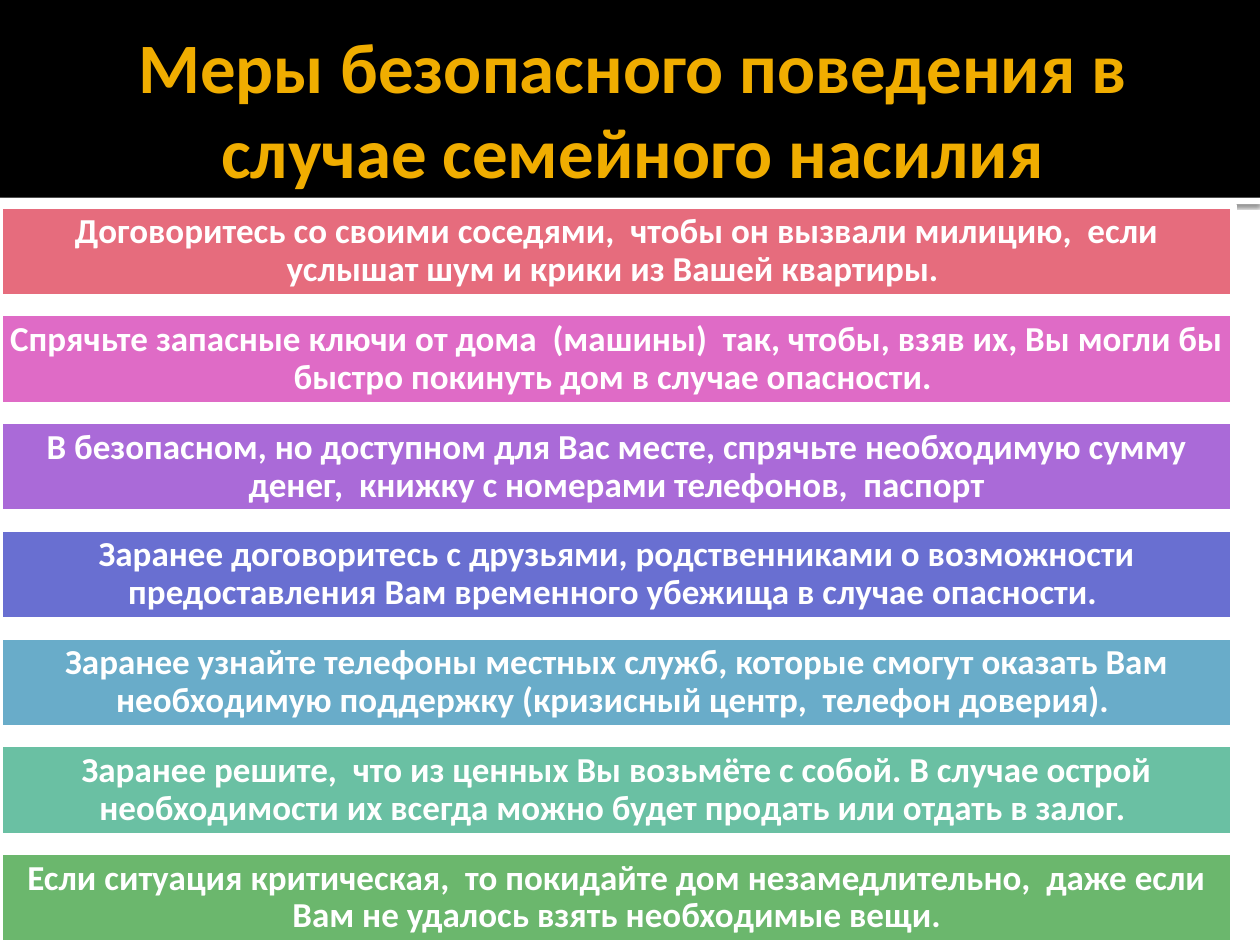
from lxml import etree
from pptx import Presentation
from pptx.dml.color import RGBColor
from pptx.enum.shapes import MSO_SHAPE
from pptx.enum.text import MSO_ANCHOR, PP_ALIGN
from pptx.oxml.ns import qn
from pptx.util import Inches, Pt

RECT = MSO_SHAPE.RECTANGLE
MIDDLE = MSO_ANCHOR.MIDDLE
CENTER = PP_ALIGN.CENTER

COLORS = {
    "black": "000000", "white": "FFFFFF", "gold": "F0AD00",
    "rose": "E66C7D", "pink": "DF6BC6", "purple": "AA6AD8", "indigo": "696FD1",
    "blue": "69ACC9", "teal": "6AC0A3", "green": "6BB76D",
}

RULES = [
    ("rose", "Договоритесь со своими соседями,  чтобы он вызвали милицию,  если услышат шум и крики из Вашей квартиры. "),
    ("pink", "Спрячьте запасные ключи от дома  (машины)  так, чтобы, взяв их, Вы могли бы быстро покинуть дом в случае опасности. "),
    ("purple", "В безопасном, но доступном для Вас месте, спрячьте необходимую сумму денег,  книжку с номерами телефонов,  паспорт"),
    ("indigo", "Заранее договоритесь с друзьями, родственниками о возможности предоставления Вам временного убежища в случае опасности. "),
    ("blue", "Заранее узнайте телефоны местных служб, которые смогут оказать Вам необходимую поддержку (кризисный центр,  телефон доверия). "),
    ("teal", "Заранее решите,  что из ценных Вы возьмёте с собой. В случае острой необходимости их всегда можно будет продать или отдать в залог. "),
    ("green", "Если ситуация критическая,  то покидайте дом незамедлительно,  даже если Вам не удалось взять необходимые вещи."),
]


class Deck:
    font = "Calibri"

    def __init__(self, slide):
        self.slide = slide

    def color(self, name):
        return RGBColor.from_string(COLORS[name])

    def rect(self, box, fill, line=None):
        shape = self.slide.shapes.add_shape(RECT, *map(Inches, box))
        shape.shadow.inherit = False
        shape.fill.solid()
        shape.fill.fore_color.rgb = self.color(fill)
        if line:
            shape.line.color.rgb = self.color(line)
            shape.line.width = Pt(3.78)
        else:
            shape.line.fill.background()
        return shape

    def shade(self, shape, blur, dist, alpha):
        effects = shape._element.spPr.find(qn("a:effectLst"))
        shadow = etree.SubElement(
            effects, qn("a:outerShdw"), blurRad=str(Pt(blur)), dist=str(Pt(dist)),
            dir="5400000", algn="t", rotWithShape="0")
        tint = etree.SubElement(shadow, qn("a:srgbClr"), val=COLORS["black"])
        etree.SubElement(tint, qn("a:alpha"), val=str(alpha * 1000))

    def label(self, shape, text, size, color, insets, spacing=1.0):
        frame = shape.text_frame
        sides = ("margin_left", "margin_top", "margin_right", "margin_bottom")
        style = dict(zip(sides, map(Inches, insets)))
        style.update(word_wrap=True, vertical_anchor=MIDDLE)
        for key, value in style.items():
            setattr(frame, key, value)
        para = frame.paragraphs[0]
        para.alignment = CENTER
        para.line_spacing = spacing
        run = para.add_run()
        run.text = text
        run.font.color.rgb = self.color(color)
        for key, value in {"name": self.font, "size": Pt(size), "bold": True}.items():
            setattr(run.font, key, value)

    def title(self, box, text):
        shape = self.slide.shapes.add_textbox(*map(Inches, box))
        self.label(shape, text, 40.5, "gold", (0.1, 0.05, 0.05, 0.05))

    def bar(self, box, fill, text):
        shape = self.rect(box, fill, "white")
        self.label(shape, text, 20, "white", (0.08,) * 4, 0.9)


def main():
    prs = Presentation()
    prs.slide_width, prs.slide_height = Inches(10), Inches(7.5)
    deck = Deck(prs.slides.add_slide(prs.slide_layouts[6]))

    # Header band with a shadowed white strip below it
    strip = deck.rect((0, 1.57, 10, 0.05), "white")
    deck.shade(strip, 2.5, 0.8, 60)
    deck.rect((0, 0, 10, 1.57), "black")
    deck.title((0.5, 0.17, 9, 1.37), "Меры безопасного поведения в случае семейного насилия")

    # Evenly spaced safety rules
    first, last = 1.63, 6.76
    step = (last - first) / (len(RULES) - 1)
    for row, (fill, text) in enumerate(RULES):
        deck.bar((0, first + row * step, 9.79, 0.73), fill, text)

    prs.save("out.pptx")


if __name__ == "__main__":
    main()
